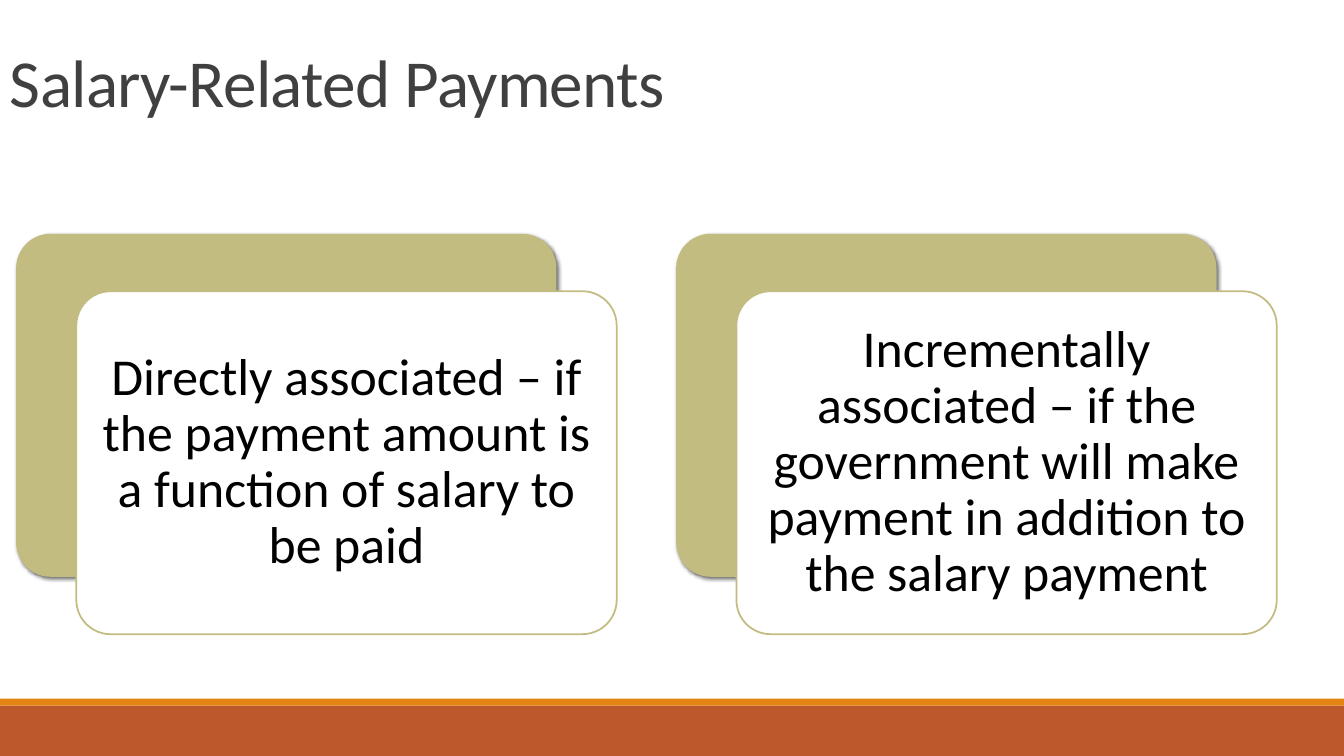
from lxml.etree import SubElement
from pptx import Presentation
from pptx.dml.color import RGBColor
from pptx.enum.shapes import MSO_SHAPE
from pptx.enum.text import MSO_ANCHOR, PP_ALIGN
from pptx.oxml.ns import qn
from pptx.util import Pt

COLORS = {
    "title": "404040",
    "text": "000000",
    "card": "FFFFFF",
    "olive": "C2BC80",
    "orange": "E48312",
    "rust": "BD582C",
    "shadow": "000000",
}
FONT = "Calibri"
PAGE_WIDTH, PAGE_HEIGHT = 960, 540
PAYMENT_TYPES = [
    "Directly associated – if the payment amount is a function of salary to be paid",
    "Incrementally associated – if the government will make payment in addition to the salary payment",
]


def color(name):
    return RGBColor.from_string(COLORS[name])


def add_block(page, kind, box, fill, line=None):
    block = page.shapes.add_shape(kind, *map(Pt, box))
    block.shadow.inherit = False
    block.fill.solid()
    block.fill.fore_color.rgb = color(fill)
    if line:
        block.line.color.rgb = color(line)
        block.line.width = Pt(1.25)
    else:
        block.line.fill.background()
    return block


def add_shadow(block):
    effects = block._element.spPr.find(qn("a:effectLst"))
    shadow = SubElement(effects, qn("a:outerShdw"), blurRad=str(Pt(3)),
                        dist=str(Pt(2)), dir="2700000", algn="ctr", rotWithShape="0")
    tint = SubElement(shadow, qn("a:srgbClr"), val=COLORS["shadow"])
    SubElement(tint, qn("a:alpha"), val="60000")


def write_text(frame, text, size, tone, spacing, align):
    frame.word_wrap = True
    frame.vertical_anchor = MSO_ANCHOR.MIDDLE
    para = frame.paragraphs[0]
    para.alignment = align
    para.line_spacing = spacing
    para.font.name = FONT
    para.font.size = Pt(size)
    para.font.color.rgb = color(tone)
    span = para.add_run()
    span.text = text
    return span


def add_footer(page, box):
    left, top, width, height = box
    stripe = 5
    add_block(page, MSO_SHAPE.RECTANGLE, (left, top + stripe, width, height - stripe), "rust")
    add_block(page, MSO_SHAPE.RECTANGLE, (left, top, width, stripe), "orange")


def add_title(page, box, text):
    title = page.shapes.add_textbox(*map(Pt, box))
    span = write_text(title.text_frame, text, 48, "title", 0.85, PP_ALIGN.LEFT)
    span._r.get_or_add_rPr().set("spc", "-50")


def add_payment_card(page, box, text):
    left, top, width, height = box
    shift_x, shift_y = 43, 41
    card_width, card_height = width - shift_x, height - shift_y
    back = add_block(page, MSO_SHAPE.ROUNDED_RECTANGLE,
                     (left, top, card_width, card_height), "olive")
    add_shadow(back)
    front = add_block(page, MSO_SHAPE.ROUNDED_RECTANGLE,
                      (left + shift_x, top + shift_y, card_width, card_height), "card", "olive")
    for block in (back, front):
        block.adjustments[0] = 0.1
    frame = front.text_frame
    frame.margin_left = frame.margin_right = Pt(10)
    frame.margin_top = frame.margin_bottom = Pt(10)
    write_text(frame, text, 37, "text", 0.9, PP_ALIGN.CENTER)


def main():
    deck = Presentation()
    deck.slide_width, deck.slide_height = Pt(PAGE_WIDTH), Pt(PAGE_HEIGHT)
    page = deck.slides.add_slide(deck.slide_layouts[6])
    add_footer(page, (0, 499, PAGE_WIDTH, 41))
    add_title(page, (0, 0, 885, 124), "Salary-Related Payments")
    for index, text in enumerate(PAYMENT_TYPES):
        add_payment_card(page, (11.5 + index * 471.5, 167, 429, 286), text)
    deck.save("out.pptx")


if __name__ == "__main__":
    main()
